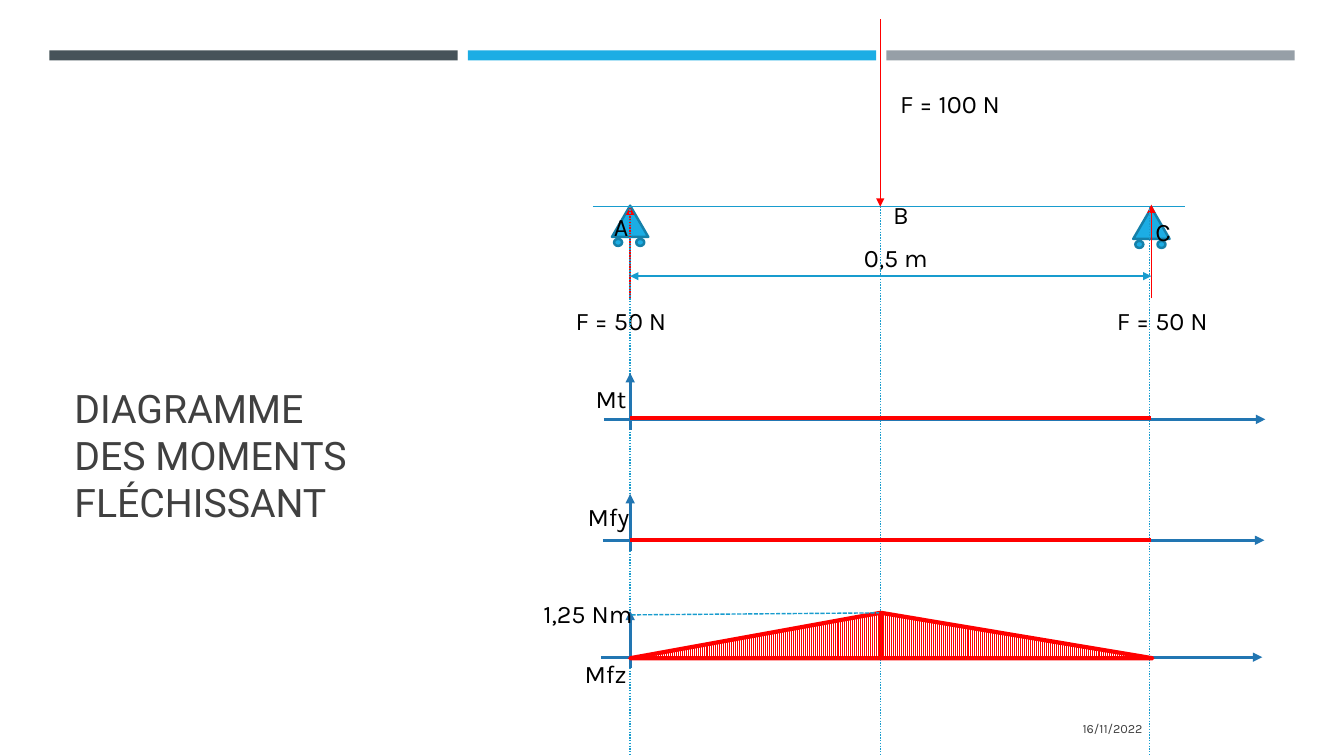
from lxml import etree
from pptx import Presentation
from pptx.dml.color import RGBColor
from pptx.enum.dml import MSO_LINE as DASH, MSO_PATTERN as PATTERN
from pptx.enum.shapes import MSO_CONNECTOR as CONNECTOR, MSO_SHAPE as SHAPE
from pptx.enum.text import MSO_ANCHOR as ANCHOR, PP_ALIGN as ALIGN
from pptx.oxml.ns import qn
from pptx.util import Inches, Pt

CYAN, CYAN_LINE, CYAN_EDGE = "1CADE4", "189CCE", "1580A9"
RED, AXIS_BLUE, WHITE = "FF0000", "2276B2", "FFFFFF"
BLACK, DARK_GREY = "000000", "404040"


def color(hex_code):
    return RGBColor.from_string(hex_code)


class DiagramPage:
    """Holds the slide and draws each kind of element in its style."""

    font = "Karla"
    label_size = 18

    def __init__(self, deck):
        self.page = deck.slides.add_slide(deck.slide_layouts[6])

    def shape(self, kind, left, top, width, height, fill=None, edge=None, weight=1.75):
        item = self.page.shapes.add_shape(
            kind, Inches(left), Inches(top), Inches(width), Inches(height))
        item.shadow.inherit = False
        if fill:
            item.fill.solid()
            item.fill.fore_color.rgb = color(fill)
        if edge:
            item.line.color.rgb = color(edge)
            item.line.width = Pt(weight)
        else:
            item.line.fill.background()
        return item

    def support(self, left, top):
        """Triangle on two rollers."""
        self.shape(SHAPE.ISOSCELES_TRIANGLE, left, top, 0.36, 0.31, CYAN, CYAN_EDGE)
        for offset in (0.02, 0.24):
            self.shape(SHAPE.OVAL, left + offset, top + 0.33, 0.08, 0.07, CYAN, CYAN_EDGE)

    def moment_area(self, left, width, apex):
        """Hatched triangle; apex is 0 for its left end and 1 for its right."""
        area = self.shape(SHAPE.ISOSCELES_TRIANGLE, left, 6.08, width, 0.45,
                          edge=RED, weight=3)
        area.adjustments[0] = apex
        area.fill.patterned()
        area.fill.pattern = PATTERN.LIGHT_VERTICAL
        area.fill.fore_color.rgb = color(RED)
        area.fill.back_color.rgb = color(WHITE)

    def line(self, start, end, stroke, weight=1, dash=None, arrows=()):
        link = self.page.shapes.add_connector(
            CONNECTOR.STRAIGHT, *(Inches(value) for value in (*start, *end)))
        link.line.color.rgb = color(stroke)
        link.line.width = Pt(weight)
        if dash:
            link.line.dash_style = dash
        properties = link._element.spPr
        for arrow in arrows:
            etree.SubElement(properties.find(qn("a:ln")), qn(f"a:{arrow}End"), type="triangle")
        etree.SubElement(properties, qn("a:effectLst"))

    def text(self, words, left, top, width=1.37, height=0.4, size=label_size, font=font,
             ink=BLACK, anchor=ANCHOR.TOP, align=ALIGN.LEFT):
        box = self.page.shapes.add_textbox(
            Inches(left), Inches(top), Inches(width), Inches(height))
        frame = box.text_frame
        frame.word_wrap = True
        frame.vertical_anchor = anchor
        frame.text = words
        para = frame.paragraphs[0]
        para.alignment = align
        span = para.runs[0]
        span.font.name = font
        span.font.size = Pt(size)
        span.font.color.rgb = color(ink)


def main():
    deck = Presentation()
    deck.slide_width, deck.slide_height = Inches(13.33), Inches(7.5)
    diagram = DiagramPage(deck)
    a_x, b_x, c_x = 6.25, 8.73, 11.42
    beam_y = 2.05

    # Header bars
    for index, fill in enumerate(("465359", CYAN, "969FA7")):
        diagram.shape(SHAPE.RECTANGLE, 0.49 + index * 4.15, 0.5, 4.05, 0.1, fill)

    # Title and date
    diagram.text("DIAGRAMME DES MOMENTS FLÉCHISSANT", 0.64, 0.77, 2.98, 4.49,
                 size=28, font="Roboto", ink=DARK_GREY, anchor=ANCHOR.BOTTOM)
    diagram.text("16/11/2022", 8.32, 7.03, 3.11, size=9, ink=DARK_GREY,
                 anchor=ANCHOR.MIDDLE, align=ALIGN.RIGHT)

    # Beam on its supports
    diagram.support(11.24, 2.06)
    diagram.support(6.07, 2.04)
    diagram.line((5.88, beam_y), (11.75, beam_y), CYAN_LINE)
    for point, left, top in (("A", 5.99, 2.05), ("B", 8.76, 1.93), ("C", 11.36, 2.1)):
        diagram.text(point, left, top, 0.99)

    # Forces and span
    for x, start_y, end_y in ((a_x, 2.97, beam_y), (c_x, 2.96, 2.03), (b_x, 0.19, beam_y)):
        diagram.line((x, start_y), (x, end_y), RED, arrows=("tail",))
    diagram.line((a_x, 2.74), (c_x, 2.74), CYAN_LINE, arrows=("head", "tail"))
    diagram.text("0,5 m", 8.47, 2.35)
    diagram.text("F = 100 N", 8.83, 0.83)
    for left in (5.61, 10.98):
        diagram.text("F = 50 N", left, 2.98)

    # Dotted guides
    for x in (a_x, b_x, 11.4):
        diagram.line((x, beam_y), (x, 7.5), CYAN_LINE, dash=DASH.ROUND_DOT)

    # Moment axes
    for name, axis_left, axis_y, label_left, label_top in (
            ("Mt", 5.99, 4.16, 5.81, 3.75),
            ("Mfy", 5.98, 5.36, 5.73, 4.92),
            ("Mfz", 5.96, 6.52, 5.7, 6.48)):
        diagram.line((axis_left, axis_y), (axis_left + 6.56, axis_y), AXIS_BLUE, 2.25,
                     arrows=("tail",))
        diagram.line((a_x, axis_y + 0.11), (a_x, axis_y - 0.46), AXIS_BLUE, 2.25,
                     arrows=("tail",))
        diagram.text(name, label_left, label_top)

    # Zero moments and the bending moment
    diagram.text("1,25 Nm", 5.29, 5.89)
    for y in (4.15, 5.36):
        diagram.line((a_x, y), (c_x, y), RED, 3)
    diagram.moment_area(a_x, 2.48, apex=1)
    diagram.line((b_x, 6.08), (a_x, 6.1), CYAN_LINE, dash=DASH.SQUARE_DOT)
    diagram.moment_area(8.74, 2.69, apex=0)

    deck.save("out.pptx")


if __name__ == "__main__":
    main()
